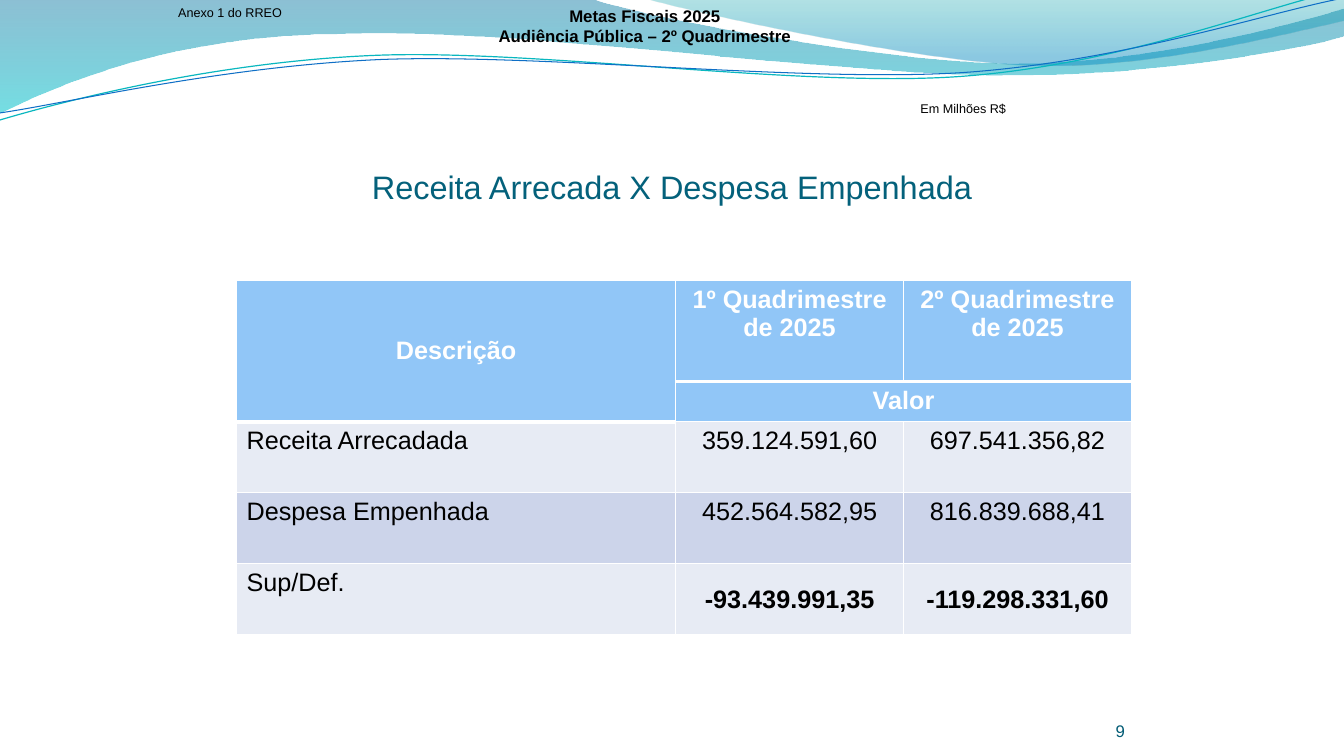
from lxml.etree import SubElement
from pptx import Presentation
from pptx.dml.color import RGBColor
from pptx.enum.text import MSO_ANCHOR, PP_ALIGN
from pptx.oxml.ns import qn
from pptx.util import Pt

COLORS = {
    "title": "04617B", "number": "035C75", "text": "000000", "white": "FFFFFF",
    "header": "91C6F7", "light": "E7EBF4", "dark": "CCD4EA",
    "teal_line": "09B7BF", "blue_line": "0F6FC6",
    "deep_blue": "0074A0", "aqua": "00C4CD", "sky": "008ABF", "sea": "00A0A8",
}


def draw_wave(start, segments, closed):
    points = []
    for segment in segments:
        points += zip(segment[::2], segment[1::2])
    builder = page.shapes.build_freeform(Pt(start[0]), Pt(start[1]))
    builder.add_line_segments([(Pt(x), Pt(y)) for x, y in points], close=closed)
    wave = builder.convert_to_shape()
    wave.shadow.inherit = False
    steps = iter(list(wave._element.spPr.iter(qn("a:lnTo"))))
    for segment in segments:
        step = next(steps)
        if len(segment) == 6:
            step.addprevious(curve := step.makeelement(qn("a:cubicBezTo")))
            for corner in (step, next(steps), next(steps)):
                curve.append(corner[0])
                corner.getparent().remove(corner)
    return wave


def format_text(frame, size, color, bold=False, align=PP_ALIGN.CENTER):
    for para in frame.paragraphs:
        para.alignment = align
        for span in para.runs:
            span.font.name = "Arial"
            span.font.size = Pt(size)
            span.font.bold = bold
            span.font.color.rgb = RGBColor.from_string(COLORS[color])


deck = Presentation()
deck.slide_width, deck.slide_height = Pt(960), Pt(540)
page = deck.slides.add_slide(deck.slide_layouts[5])

bands = [
    ((0, -0.7), [(422.6, -0.7), (456.5, 12.2, 637.2, 45.4, 727.9, 45.4),
                 (818.6, 45.4, 920.2, 18.7, 959.8, 6.5), (961.2, 25.9),
                 (943.9, 31.7, 835.2, 54.7, 715.7, 54), (596.9, 54, 366.5, 20.2, 247, 24.5),
                 (123.1, 25.2, 43.9, 59.8, -0.7, 81.4)],
     270, [(0, "deep_blue", 45), (1, "aqua", 55)]),
    ((460, -0.7), [(488.9, 7.9, 654.5, 44.6, 738, 46.8),
                   (821.5, 49.7, 923, 23, 960, 15.1), (960, 0)],
     90, [(0.2, "sky", 45), (1, "sea", 30)]),
]
for start, segments, angle, stops in bands:
    band = draw_wave(start, segments, True)
    band.line.fill.background()
    band.fill.gradient()
    band.fill.gradient_angle = angle
    for stop, (position, color, opacity) in zip(band.fill.gradient_stops, stops):
        stop.position = position
        stop.color.rgb = RGBColor.from_string(COLORS[color])
    tints = band._element.spPr.iter(qn("a:srgbClr"))
    for tint, (position, color, opacity) in zip(tints, stops):
        SubElement(tint, qn("a:alpha"), val=str(opacity * 1000))

strands = [
    ((-1.6, 63.1), [(45.2, 51.6, 152.1, 29.2, 266, 29.6), (379.8, 29.9, 567, 66.8, 683.2, 64.4),
                    (798.6, 61.9, 901.9, 25.7, 960.1, 15.5)], "teal_line", 0.85),
    ((-1.3, 58), [(44.4, 53.7, 157.1, 32.3, 272.4, 32.7), (386.9, 33.8, 572.2, 63.4, 686.9, 61.6),
                  (802.4, 59.1, 904.7, 29.3, 961.5, 21.2)], "blue_line", 0.75),
]
for start, segments, color, width in strands:
    strand = draw_wave(start, segments, False)
    strand.rotation = 357.3
    strand.fill.background()
    strand.line.color.rgb = RGBColor.from_string(COLORS[color])
    strand.line.width = Pt(width)

title = page.shapes.title
title.left, title.top, title.width, title.height = Pt(156), Pt(118), Pt(648), Pt(31)
frame = title.text_frame
frame.text = "Receita Arrecada X Despesa Empenhada"
frame.margin_left = frame.margin_top = frame.margin_right = frame.margin_bottom = 0
frame.vertical_anchor = MSO_ANCHOR.MIDDLE
format_text(frame, 23.2, "title")

labels = [
    ("9", (743.8, 500.4, 59.8, 28.8), 12, "number", False, PP_ALIGN.RIGHT, MSO_ANCHOR.BOTTOM, 0),
    ("Em Milhões R$", (650.2, 68.4, 75.6, 18), 9, "text", False,
     PP_ALIGN.CENTER, MSO_ANCHOR.TOP, 7.2),
    ("Anexo 1 do RREO", (120.2, 0, 97.2, 18), 9, "text", False,
     PP_ALIGN.LEFT, MSO_ANCHOR.TOP, 7.2),
    ("Metas Fiscais 2025\nAudiência Pública – 2º Quadrimestre", (338.6, 0.3, 244.1, 36), 12, "text",
     True, PP_ALIGN.CENTER, MSO_ANCHOR.MIDDLE, 7.2),
]
for text, place, size, color, bold, align, anchor, margin in labels:
    box = page.shapes.add_textbox(*[Pt(value) for value in place])
    frame = box.text_frame
    frame.text = text
    frame.word_wrap = False
    frame.vertical_anchor = anchor
    frame.margin_left = frame.margin_right = Pt(margin)
    frame.margin_top = frame.margin_bottom = Pt(margin / 2)
    format_text(frame, size, color, bold, align)

rows = [
    ["Descrição", "1º Quadrimestre de 2025", "2º Quadrimestre de 2025"],
    ["", "Valor", ""],
    ["Receita Arrecadada", "359.124.591,60", "697.541.356,82"],
    ["Despesa Empenhada", "452.564.582,95", "816.839.688,41"],
    ["Sup/Def.", "-93.439.991,35", "-119.298.331,60"],
]
row_fills = ["header", "header", "light", "dark", "light"]
row_heights = [72, 28.4, 50.6, 50.6, 50.6]
column_widths = [313.6, 162.8, 162.8]
table = page.shapes.add_table(
    len(rows), len(column_widths), Pt(169), Pt(200.4),
    Pt(sum(column_widths)), Pt(sum(row_heights))).table
table.first_row = table.horz_banding = False
for column, width in zip(table.columns, column_widths):
    column.width = Pt(width)
for row, height in zip(table.rows, row_heights):
    row.height = Pt(height)
table.cell(0, 0).merge(table.cell(1, 0))
table.cell(1, 1).merge(table.cell(1, 2))

for r, texts in enumerate(rows):
    for c, text in enumerate(texts):
        cell = table.cell(r, c)
        heading = r < 2
        total = r == 4 and c > 0
        thick_sides = {
            "lnT": r == (2 if c == 0 else 1),
            "lnB": heading if c == 0 else r == 0,
        }
        properties = cell._tc.get_or_add_tcPr()
        for side in ("lnL", "lnR", "lnT", "lnB"):
            width = 3 if thick_sides.get(side) else 0.96
            border = SubElement(properties, qn("a:" + side), w=str(int(Pt(width))))
            paint = SubElement(border, qn("a:solidFill"))
            SubElement(paint, qn("a:srgbClr"), val=COLORS["white"])
        cell.fill.solid()
        cell.fill.fore_color.rgb = RGBColor.from_string(COLORS[row_fills[r]])
        cell.margin_left = cell.margin_right = Pt(0.7 if total else 7.2)
        cell.margin_top = Pt(0.7 if total else 3.6)
        cell.margin_bottom = Pt(0 if total else 3.6)
        centred = total or (r, c) == (0, 0)
        cell.vertical_anchor = MSO_ANCHOR.MIDDLE if centred else MSO_ANCHOR.TOP
        if text:
            cell.text_frame.text = text
            align = PP_ALIGN.CENTER if heading or c > 0 else PP_ALIGN.LEFT
            format_text(cell.text_frame, 18, "white" if heading else "text",
                        heading or total, align)

deck.save("out.pptx")
